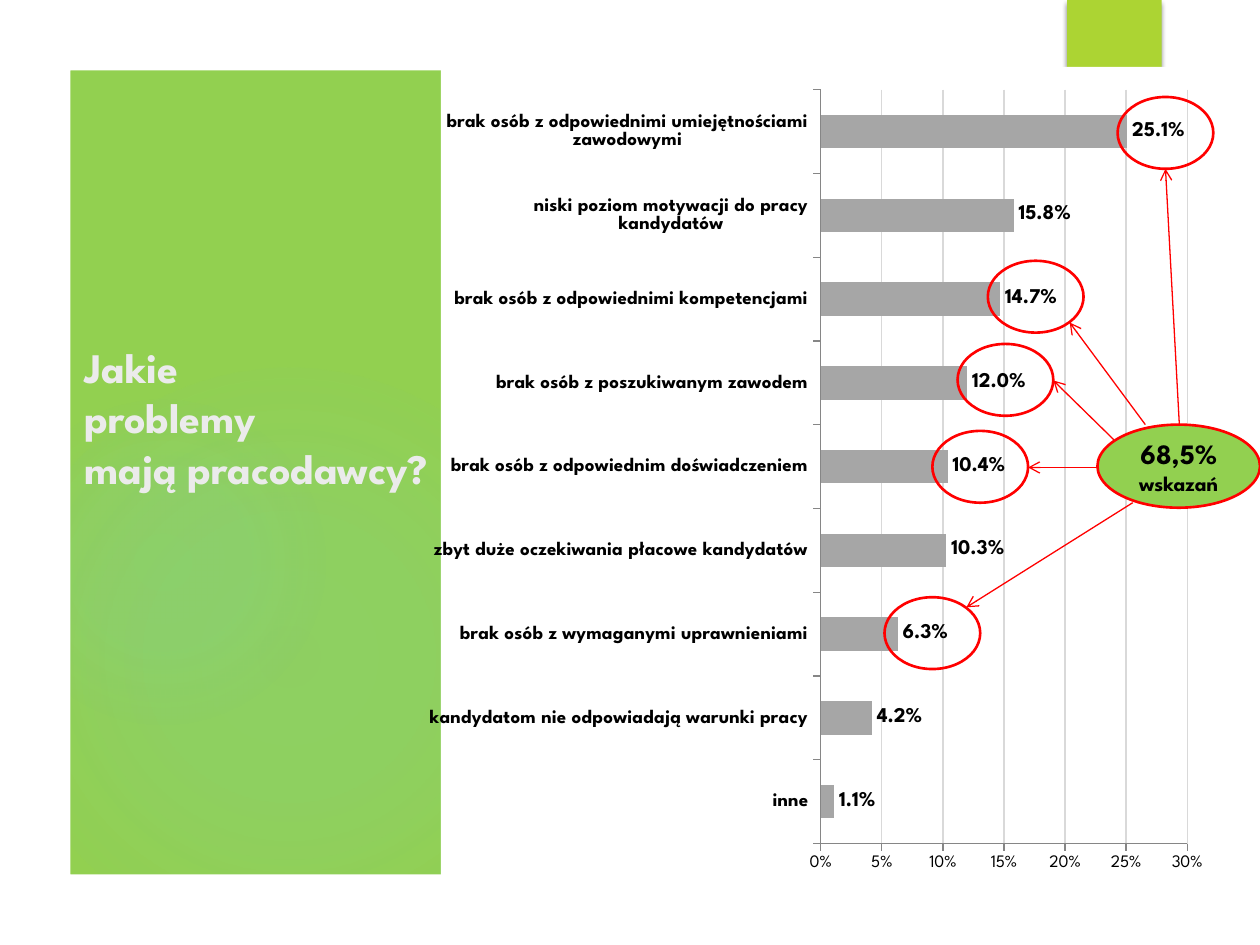
import pptx
import pptx.chart.data
import pptx.dml.color
import pptx.enum.chart
import pptx.enum.shapes
import pptx.enum.text
import pptx.oxml
import pptx.oxml.ns
import pptx.util
from pptx.util import Inches

COLORS = {
    "green": "92D050", "lime": "ACD433", "glow": "75CEEC", "white": "FFFFFF",
    "title": "EBEBEB", "black": "000000", "red": "FF0000",
    "bar": "A6A6A6", "grid": "D9D9D9", "axis": "868686",
}
FONT = "League Spartan"
NAMESPACES = pptx.oxml.ns.nsdecls("a", "c")
MSO_SHAPE = pptx.enum.shapes.MSO_SHAPE


def rgb(name):
    return pptx.dml.color.RGBColor.from_string(COLORS[name])


def add_plain_shape(kind, left, top, width, height, fill=None, line=None):
    """Add a shape without shadow; fill and line are colour names or None."""
    shape = slide.shapes.add_shape(
        kind, Inches(left), Inches(top), Inches(width), Inches(height))
    shape.shadow.inherit = False
    if fill:
        shape.fill.solid()
        shape.fill.fore_color.rgb = rgb(fill)
    else:
        shape.fill.background()
    if line:
        shape.line.color.rgb = rgb(line)
        shape.line.width = pptx.util.Pt(1.5)
    else:
        shape.line.fill.background()
    return shape


presentation = pptx.Presentation()
presentation.slide_width = Inches(10)
presentation.slide_height = Inches(7.5)
slide = presentation.slides.add_slide(presentation.slide_layouts[5])
slide.background.fill.solid()
slide.background.fill.fore_color.rgb = rgb("green")

# Soft glows on the green panel: left, top, size, opacity, end of fade
for left, top, size, opacity, fade in [(0, 2.92, 4.58, 11, 75), (0, 3.17, 2.58, 8, 72)]:
    glow = add_plain_shape(MSO_SHAPE.OVAL, left, top, size, size)
    properties = glow._element.spPr
    stops = "".join(
        f'<a:gs pos="{position * 1000}"><a:srgbClr val="{COLORS["glow"]}">'
        f'<a:alpha val="{alpha * 1000}"/></a:srgbClr></a:gs>'
        for position, alpha in [(0, opacity), (36, opacity - 1), (fade, 0)])
    gradient = pptx.oxml.parse_xml(
        f'<a:gradFill {NAMESPACES}><a:gsLst>{stops}</a:gsLst><a:path path="circle">'
        '<a:fillToRect l="50000" t="50000" r="50000" b="50000"/></a:path></a:gradFill>')
    no_fill = properties.find(pptx.oxml.ns.qn("a:noFill"))
    properties.replace(no_fill, gradient)

# White page around the panel, and the tab at the top
add_plain_shape(MSO_SHAPE.RECTANGLE, 3.5, 0.5, 6.1, 6.5, "white")
frame = add_plain_shape(MSO_SHAPE.FRAME, 0, 0, 10, 7.5, "white")
frame.adjustments[0] = 0.56 / 7.5
tab = add_plain_shape(MSO_SHAPE.RECTANGLE, 8.47, 0, 0.75, 1.2, "lime")
tab._element.spPr.find(pptx.oxml.ns.qn("a:effectLst")).append(pptx.oxml.parse_xml(
    f'<a:outerShdw {NAMESPACES} blurRad="38100" dist="25400" dir="5400000" rotWithShape="0">'
    f'<a:srgbClr val="{COLORS["black"]}"><a:alpha val="45000"/></a:srgbClr></a:outerShdw>'))

# Title, brought in front of the panel
title = slide.shapes.title
slide.shapes._spTree.append(title._element)
title.left, title.top = Inches(0.57), Inches(1.6)
title.width, title.height = Inches(3.28), Inches(2.36)
title.text_frame.text = "Jakie\vproblemy\vmają pracodawcy?"
title.text_frame.auto_size = pptx.enum.text.MSO_AUTO_SIZE.NONE
title.text_frame.vertical_anchor = pptx.enum.text.MSO_ANCHOR.BOTTOM
title_paragraph = title.text_frame.paragraphs[0]
title_paragraph.alignment = pptx.enum.text.PP_ALIGN.LEFT
for run in title_paragraph.runs:
    run.font.name = FONT
    run.font.size = pptx.util.Pt(24)
    run.font.bold = True
    run.font.color.rgb = rgb("title")

# Bar chart of the employers' problems
problems = [
    ("inne", 0.011),
    ("kandydatom nie odpowiadają warunki pracy", 0.042),
    ("brak osób z wymaganymi uprawnieniami", 0.063),
    ("zbyt duże oczekiwania płacowe kandydatów", 0.103),
    ("brak osób z odpowiednim doświadczeniem", 0.104),
    ("brak osób z poszukiwanym zawodem", 0.12),
    ("brak osób z odpowiednimi kompetencjami", 0.147),
    ("niski poziom motywacji do pracy kandydatów", 0.158),
    ("brak osób z odpowiednimi umiejętnościami zawodowymi", 0.251),
]
chart_data = pptx.chart.data.CategoryChartData()
chart_data.categories = [problem for problem, share in problems]
chart_data.add_series("Series 1", [share for problem, share in problems])
chart = slide.shapes.add_chart(
    pptx.enum.chart.XL_CHART_TYPE.BAR_CLUSTERED,
    Inches(3.41), Inches(0.53), Inches(6.24), Inches(6.49), chart_data).chart
chart.has_legend = False
chart.has_title = False
chart.font.name = FONT
chart.font.size = pptx.util.Pt(10)
chart.font.color.rgb = rgb("black")
chart._chartSpace.chart.addnext(pptx.oxml.parse_xml(
    f'<c:spPr {NAMESPACES}><a:solidFill><a:srgbClr val="{COLORS["white"]}"/></a:solidFill>'
    '<a:ln><a:noFill/></a:ln></c:spPr>'))

plot_area = chart._chartSpace.chart.plotArea
for layout in plot_area.findall(pptx.oxml.ns.qn("c:layout")):
    plot_area.remove(layout)
plot_area.insert(0, pptx.oxml.parse_xml(
    f'<c:layout {NAMESPACES}><c:manualLayout><c:layoutTarget val="inner"/>'
    '<c:xMode val="edge"/><c:yMode val="edge"/><c:x val="0.49"/><c:y val="0.028"/>'
    '<c:w val="0.473"/><c:h val="0.922"/></c:manualLayout></c:layout>'))

plot = chart.plots[0]
plot.gap_width = 150
plot.vary_by_categories = False
bars = plot.series[0]
bars.format.fill.solid()
bars.format.fill.fore_color.rgb = rgb("bar")
plot.has_data_labels = True
labels = plot.data_labels
labels.show_value = True
labels.number_format = "0.0%"
labels.number_format_is_linked = False
labels.position = pptx.enum.chart.XL_LABEL_POSITION.OUTSIDE_END
labels.font.name = FONT
labels.font.size = pptx.util.Pt(12)
labels.font.bold = True

category_axis, value_axis = chart.category_axis, chart.value_axis
for axis, size in [(category_axis, 11), (value_axis, 10)]:
    axis.major_tick_mark = pptx.enum.chart.XL_TICK_MARK.OUTSIDE
    axis.format.line.color.rgb = rgb("axis")
    axis.tick_labels.font.name = FONT
    axis.tick_labels.font.size = pptx.util.Pt(size)
    axis.tick_labels.font.bold = axis is category_axis
value_axis.minimum_scale = 0
value_axis.maximum_scale = 0.3
value_axis.major_unit = 0.05
value_axis.tick_labels.number_format = "0%"
value_axis.tick_labels.number_format_is_linked = False
value_axis.major_gridlines.format.line.color.rgb = rgb("grid")
value_axis.major_gridlines.format.line.width = pptx.util.Pt(0.75)

# Total of the circled answers
total = add_plain_shape(MSO_SHAPE.OVAL, 8.71, 3.37, 1.29, 0.66, "green", "red")
total.text_frame.text = "68,5%\nwskazań"
total.text_frame.vertical_anchor = pptx.enum.text.MSO_ANCHOR.MIDDLE
for paragraph, size in zip(total.text_frame.paragraphs, [16, 12]):
    paragraph.alignment = pptx.enum.text.PP_ALIGN.CENTER
    paragraph.font.name = FONT
    paragraph.font.size = pptx.util.Pt(size)
    paragraph.font.bold = True
    paragraph.font.color.rgb = rgb("black")

# Rings around the added values, each with its arrow: ring corner, start, end
for ring, start, end in [
    ((8.87, 0.77), (9.36, 3.37), (9.25, 1.34)),
    ((7.84, 2.07), (9.09, 3.37), (8.49, 2.56)),
    ((7.6, 2.73), (8.84, 3.49), (8.36, 3.02)),
    ((7.4, 3.42), (8.71, 3.71), (8.16, 3.71)),
    ((7.02, 4.74), (8.99, 3.99), (7.67, 4.82)),
]:
    add_plain_shape(MSO_SHAPE.OVAL, *ring, 0.76, 0.57, line="red")
    arrow = slide.shapes.add_connector(
        pptx.enum.shapes.MSO_CONNECTOR.STRAIGHT, *map(Inches, start + end))
    arrow.line.color.rgb = rgb("red")
    arrow.line.width = pptx.util.Pt(0.75)
    arrow.line._get_or_add_ln().append(
        pptx.oxml.parse_xml(f'<a:tailEnd {NAMESPACES} type="arrow"/>'))
    arrow._element.spPr.append(pptx.oxml.parse_xml(f"<a:effectLst {NAMESPACES}/>"))

presentation.save("out.pptx")
